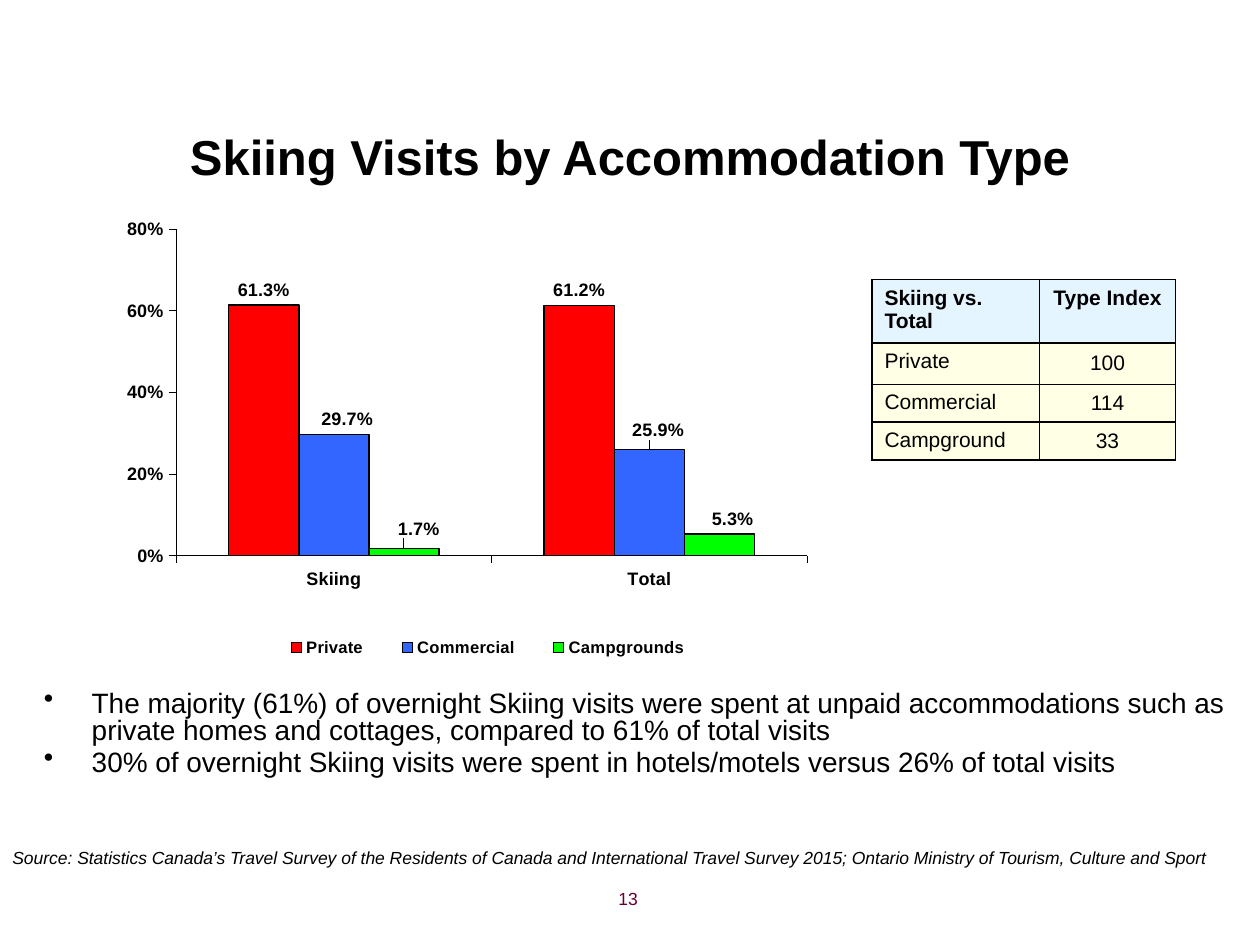
from typing import NamedTuple

from lxml import etree
from pptx import Presentation
from pptx.chart.data import CategoryChartData
from pptx.dml.color import RGBColor
from pptx.enum import chart as charts, text as texts
from pptx.oxml import ns, parse_xml
from pptx.util import Inches, Pt

BLACK = "000000"
FONT = "Arial"
LEFT, CENTER, RIGHT = texts.PP_ALIGN.LEFT, texts.PP_ALIGN.CENTER, texts.PP_ALIGN.RIGHT
TOP, MIDDLE = texts.MSO_ANCHOR.TOP, texts.MSO_ANCHOR.MIDDLE


class Box(NamedTuple):
    left: float
    top: float
    width: float
    height: float

    def lengths(self) -> list:
        return [Inches(side) for side in self]


class Series(NamedTuple):
    name: str
    values: tuple
    color: str
    label_shifts: tuple = ()


class CellStyle(NamedTuple):
    fill: str
    bold: bool
    align: int
    anchor: int
    margins: tuple


SERIES = [
    Series("Private", (0.613, 0.612), "FF0000"),
    Series("Commercial", (0.297, 0.259), "3366FF", ((0.018, 0), (0.012, -0.01))),
    Series("Campgrounds", (0.017, 0.053), "00FF00", ((0.02, -0.01), (0.018, 0))),
]
INDEX_ROWS = [
    ("Skiing vs. Total", "Type Index"),
    ("Private", "100"),
    ("Commercial", "114"),
    ("Campground", "33"),
]
FINDINGS = [
    "The majority (61%) of overnight Skiing visits were spent at unpaid accommodations "
    "such as private homes and cottages, compared to 61% of total visits",
    "30% of overnight Skiing visits were spent in hotels/motels versus 26% of total visits",
]
SOURCE = (
    "Source: Statistics Canada’s Travel Survey of the Residents of Canada and International "
    "Travel Survey 2015; Ontario Ministry of Tourism, Culture and Sport"
)


def rgb(color: str) -> RGBColor:
    return RGBColor.from_string(color)


def set_font(font, size: float, color: str = BLACK, **formats) -> None:
    for key, value in {"name": FONT, "size": Pt(size), **formats}.items():
        setattr(font, key, value)
    font.color.rgb = rgb(color)


def add_text(slide, box: Box, lines: list, size: float, color: str = BLACK,
             align=LEFT, anchor=TOP, **formats):
    frame = slide.shapes.add_textbox(*box.lengths()).text_frame
    frame.word_wrap = True
    frame.vertical_anchor = anchor
    frame.text = "\n".join(lines)
    for paragraph in frame.paragraphs:
        paragraph.alignment = align
        set_font(paragraph.runs[0].font, size, color, **formats)
    return frame


def add_findings(slide) -> None:
    frame = add_text(slide, Box(0.25, 5.44, 9.67, 1.52), FINDINGS, 16)
    for number, paragraph in enumerate(frame.paragraphs):
        properties = paragraph._p.get_or_add_pPr()
        properties.set("marL", str(Inches(0.38)))
        properties.set("indent", str(-Inches(0.38)))
        etree.SubElement(properties, ns.qn("a:buChar")).set("char", "•")
        paragraph.line_spacing = 0.8
        if number:
            paragraph.space_before = Pt(3.2)


def layout_xml(target: str = "", **sizes):
    """Manual chart layout; sizes are fractions of the chart."""
    inner = f'<c:layoutTarget val="{target}"/>' if target else ""
    if "w" in sizes:
        inner += '<c:xMode val="edge"/><c:yMode val="edge"/>'
    inner += "".join(f'<c:{key} val="{value}"/>' for key, value in sizes.items())
    return parse_xml(f'<c:layout {ns.nsdecls("c")}><c:manualLayout>{inner}'
                     '</c:manualLayout></c:layout>')


def replace_layout(parent, layout, index: int) -> None:
    for old in parent.findall(ns.qn("c:layout")):
        parent.remove(old)
    parent.insert(index, layout)


def format_series(plotted, series: Series) -> None:
    plotted.format.fill.solid()
    plotted.format.fill.fore_color.rgb = rgb(series.color)
    plotted.format.line.color.rgb = rgb(BLACK)
    plotted.format.line.width = Pt(0.75)
    plotted.invert_if_negative = False
    labels = plotted.data_labels
    outside = charts.XL_LABEL_POSITION.OUTSIDE_END
    for key, value in {"show_value": True, "number_format": "0.0%",
                       "number_format_is_linked": False, "position": outside}.items():
        setattr(labels, key, value)
    set_font(labels.font, 10.3, bold=True)
    for number, (x, y) in enumerate(series.label_shifts):
        label = plotted.points[number].data_label
        set_font(label.font, 10.3, bold=True)
        label.position = outside
        replace_layout(labels._element.dLbl_lst[number], layout_xml(x=x, y=y), 1)


def add_visits_chart(slide) -> None:
    data = CategoryChartData(number_format="0.0%")
    data.categories = ["Skiing", "Total"]
    for series in SERIES:
        data.add_series(series.name, series.values)
    chart = slide.shapes.add_chart(charts.XL_CHART_TYPE.COLUMN_CLUSTERED,
                                   *Box(0.81, 1.59, 5.89, 3.76).lengths(), data).chart
    set_font(chart.font, 10.3, bold=True)
    chart.has_title = False
    plot = chart.plots[0]
    plot.gap_width, plot.overlap, plot.vary_by_categories = 150, 0, False
    for plotted, series in zip(plot.series, SERIES):
        format_series(plotted, series)

    for axis in (chart.category_axis, chart.value_axis):
        axis.has_major_gridlines = False
        axis.major_tick_mark = charts.XL_TICK_MARK.OUTSIDE
        axis.format.line.color.rgb = rgb(BLACK)
        axis.format.line.width = Pt(0.18)
        set_font(axis.tick_labels.font, 10.3, bold=True)
    scale = {"minimum_scale": 0, "maximum_scale": 0.8, "major_unit": 0.2}
    for key, value in scale.items():
        setattr(chart.value_axis, key, value)
    chart.value_axis.tick_labels.number_format = "0%"
    chart.value_axis.tick_labels.number_format_is_linked = False

    chart.has_legend = True
    chart.legend.position = charts.XL_LEGEND_POSITION.BOTTOM
    chart.legend.include_in_layout = False
    set_font(chart.legend.font, 9.5, bold=True)
    replace_layout(chart.legend._element, layout_xml(x=0.21, y=0.91, w=0.62, h=0.07), 1)
    plot_area = chart._chartSpace.chart.plotArea
    replace_layout(plot_area, layout_xml("inner", x=0.1, y=0.06, w=0.85, h=0.69), 0)


def format_cell(cell, content: str, style: CellStyle) -> None:
    cell.text = content
    cell.vertical_anchor = style.anchor
    sides = ("margin_left", "margin_top", "margin_right", "margin_bottom")
    for side, margin in zip(sides, style.margins):
        setattr(cell, side, Inches(margin))
    paragraph = cell.text_frame.paragraphs[0]
    paragraph.alignment = style.align
    set_font(paragraph.runs[0].font, 12, bold=style.bold)
    properties = cell._tc.get_or_add_tcPr()
    for edge in ("lnL", "lnR", "lnT", "lnB"):
        properties.append(parse_xml(
            f'<a:{edge} {ns.nsdecls("a")} w="{Pt(1)}"><a:solidFill>'
            f'<a:srgbClr val="{BLACK}"/></a:solidFill></a:{edge}>'))
    cell.fill.solid()
    cell.fill.fore_color.rgb = rgb(style.fill)
    tint = properties.find(ns.qn("a:solidFill")).find(ns.qn("a:srgbClr"))
    etree.SubElement(tint, ns.qn("a:alpha")).set("val", "50000")


def add_index_table(slide) -> None:
    table = slide.shapes.add_table(len(INDEX_ROWS), 2,
                                   *Box(6.92, 2.22, 2.42, 1.43).lengths()).table
    for column, width in zip(table.columns, (1.33, 1.08)):
        column.width = Inches(width)
    for row, height in zip(table.rows, (0.5, 0.33, 0.3, 0.3)):
        row.height = Inches(height)
    padded, tight = (0.1, 0.05, 0.1, 0.05), (0, 0, 0, 0)
    header = [CellStyle("CCECFF", True, align, TOP, padded) for align in (LEFT, CENTER)]
    body = [CellStyle("FFFFCC", False, LEFT, TOP, padded),
            CellStyle("FFFFCC", False, CENTER, MIDDLE, tight)]
    for r, contents in enumerate(INDEX_ROWS):
        for c, (content, style) in enumerate(zip(contents, body if r else header)):
            format_cell(table.cell(r, c), content, style)


def main() -> None:
    deck = Presentation()
    deck.slide_width, deck.slide_height = Inches(10), Inches(7.5)
    slide = deck.slides.add_slide(deck.slide_layouts[6])
    add_text(slide, Box(0.5, 0.86, 9, 0.75), ["Skiing Visits by Accommodation Type"], 28,
             align=CENTER, anchor=MIDDLE, bold=True)
    add_findings(slide)
    add_index_table(slide)
    add_text(slide, Box(2.83, 7, 2.33, 0.35), ["13"], 10, "660033", RIGHT)
    add_visits_chart(slide)
    add_text(slide, Box(0, 6.67, 9.8, 0.27), [SOURCE], 10, italic=True)
    deck.save("out.pptx")


if __name__ == "__main__":
    main()
